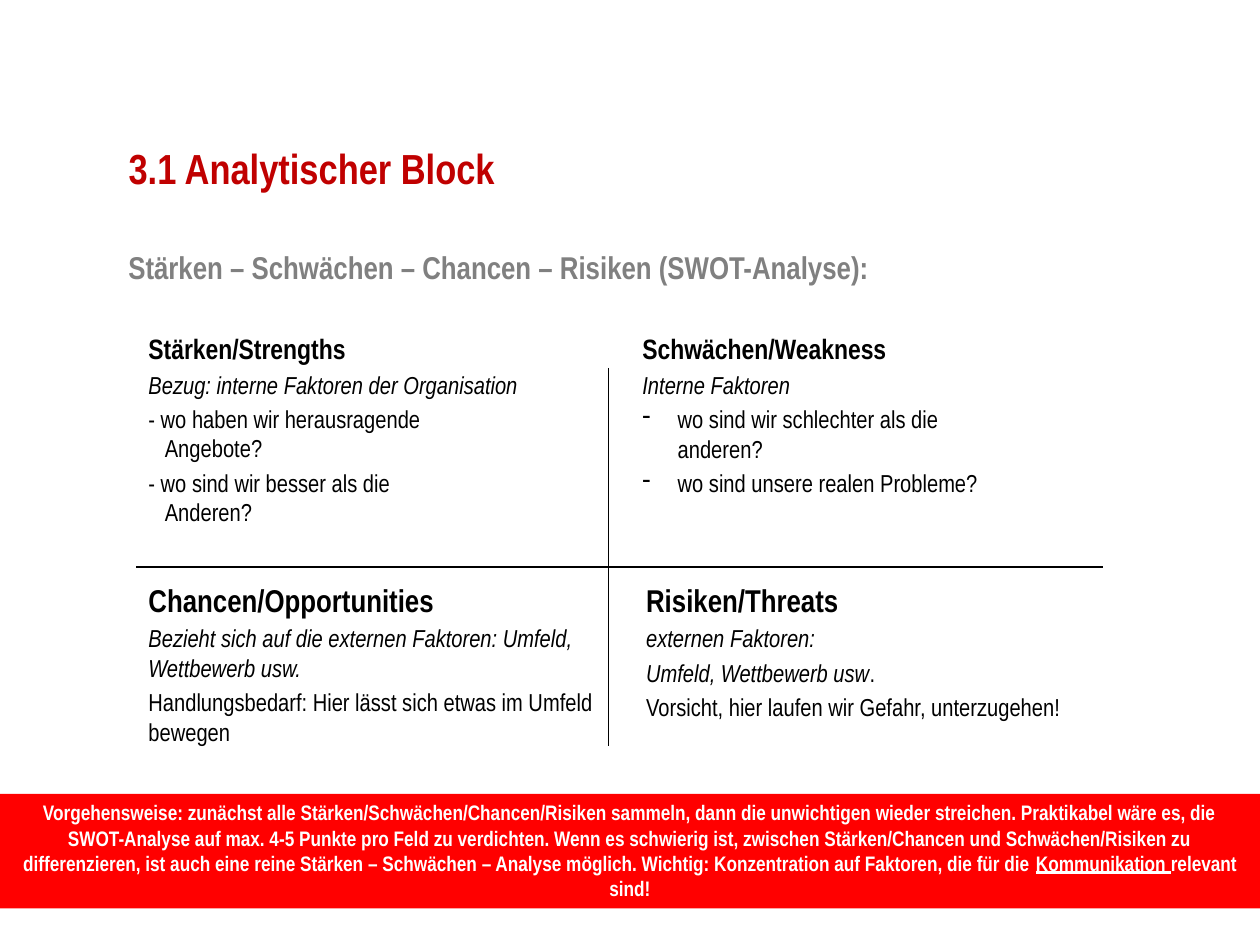
from lxml import etree
from pptx import Presentation
from pptx.dml.color import RGBColor
from pptx.enum.shapes import MSO_CONNECTOR, MSO_SHAPE
from pptx.enum.text import MSO_ANCHOR, MSO_AUTO_SIZE, PP_ALIGN
from pptx.oxml.ns import qn
from pptx.util import Inches, Pt

LEFT, CENTER = PP_ALIGN.LEFT, PP_ALIGN.CENTER
TOP = MSO_ANCHOR.TOP
FIT_SHAPE = MSO_AUTO_SIZE.SHAPE_TO_FIT_TEXT
RECTANGLE = MSO_SHAPE.RECTANGLE
STRAIGHT = MSO_CONNECTOR.STRAIGHT

DARK_RED = RGBColor(0xC0, 0x00, 0x00)
RED = RGBColor(0xFF, 0x00, 0x00)
GRAY = RGBColor(0x80, 0x80, 0x80)
BLACK = RGBColor(0x00, 0x00, 0x00)
WHITE = RGBColor(0xFF, 0xFF, 0xFF)

FONT = "Arial Narrow"
TITLE = {"size": Pt(24), "bold": True}
SUBTITLE = {"size": Pt(18), "bold": True}
INTERNAL_HEADING = {"size": Pt(16), "bold": True}
EXTERNAL_HEADING = {"size": Pt(18), "bold": True}
BODY = {"size": Pt(14), "bold": False}
ITALIC = {**BODY, "italic": True}
BANNER = {"size": Pt(12), "bold": True}
UNDERLINED = {**BANNER, "underline": True}

DASH_HANG = 0.13
BULLET_HANG = 0.28

# Each quadrant: left, top, width, height, paragraphs (runs, hanging indent, bullet)
QUADRANTS = [
    (1.08, 2.58, 3.75, 1.93, [
        ([("Stärken/Strengths", INTERNAL_HEADING)], 0, None),
        ([("Bezug: interne Faktoren der Organisation", ITALIC)], 0, None),
        ([("- wo haben wir herausragende \nAngebote?", BODY)], DASH_HANG, None),
        ([("- wo sind wir besser als die \nAnderen?", BODY)], DASH_HANG, None),
    ]),
    (5, 2.58, 3.75, 1.45, [
        ([("Schwächen/Weakness", INTERNAL_HEADING)], 0, None),
        ([("Interne Faktoren", ITALIC)], 0, None),
        ([("wo sind wir schlechter als die \nanderen?", BODY)], BULLET_HANG, "-"),
        ([("wo sind unsere realen Probleme?", BODY)], BULLET_HANG, "-"),
    ]),
    (1.08, 4.56, 3.83, 1.47, [
        ([("Chancen/Opportunities", EXTERNAL_HEADING)], 0, None),
        ([("Bezieht sich auf die externen Faktoren: Umfeld, Wettbewerb usw.", ITALIC)],
         0, None),
        ([("Handlungsbedarf: Hier lässt sich etwas im Umfeld bewegen", BODY)], 0, None),
    ]),
    (5.03, 4.56, 3.83, 1.47, [
        ([("Risiken/Threats", EXTERNAL_HEADING)], 0, None),
        ([("externen Faktoren:", ITALIC)], 0, None),
        ([("Umfeld, Wettbewerb usw", ITALIC), (".", BODY)], 0, None),
        ([("Vorsicht, hier laufen wir Gefahr, unterzugehen!", BODY)], 0, None),
    ]),
]

AXES = [(1.08, 4.5, 8.75, 4.5), (4.83, 2.92, 4.83, 5.92)]

PROCEDURE = [
    ("Vorgehensweise: zunächst alle Stärken/Schwächen/Chancen/Risiken sammeln, dann die "
     "unwichtigen wieder streichen. Praktikabel wäre es, die SWOT-Analyse auf max. 4-5 "
     "Punkte pro Feld zu verdichten. Wenn es schwierig ist, zwischen Stärken/Chancen und "
     "Schwächen/Risiken zu differenzieren, ist auch eine reine Stärken – Schwächen – "
     "Analyse möglich. Wichtig: Konzentration auf Faktoren, die für die ", BANNER),
    ("Kommunikation ", UNDERLINED),
    ("relevant sind!", BANNER),
]


def set_hanging(paragraph, hang, bullet):
    """Give a paragraph a hanging indent and an optional bullet character."""
    properties = paragraph._p.get_or_add_pPr()
    properties.set("marL", str(Inches(hang)))
    properties.set("indent", str(-Inches(hang)))
    if bullet:
        etree.SubElement(properties, qn("a:buChar")).set("char", bullet)


def write_runs(paragraph, runs, color):
    """Write formatted runs, turning newlines into line breaks."""
    for text, style in runs:
        for index, line in enumerate(text.split("\n")):
            if index:
                paragraph.add_line_break()
            run = paragraph.add_run()
            run.text = line
            run.font.color.rgb = color
            for name, value in {"name": FONT, **style}.items():
                setattr(run.font, name, value)


def fill_text(shape, paragraphs, color, alignment=LEFT):
    """Fill a shape with top-anchored, wrapped paragraphs."""
    frame = shape.text_frame
    settings = {"word_wrap": True, "auto_size": FIT_SHAPE, "vertical_anchor": TOP}
    for name, value in settings.items():
        setattr(frame, name, value)
    for index, (runs, hang, bullet) in enumerate(paragraphs):
        paragraph = frame.add_paragraph() if index else frame.paragraphs[0]
        paragraph.alignment = alignment
        if index:
            paragraph.space_before = Pt(2.8)
        if hang:
            set_hanging(paragraph, hang, bullet)
        write_runs(paragraph, runs, color)


def place_title(slide):
    """Move and format the title placeholder."""
    title = slide.shapes.title
    box = {"left": 0.92, "top": 1.08, "width": 6.5, "height": 0.5}
    for name, value in box.items():
        setattr(title, name, Inches(value))
    fill_text(title, [([("3.1 Analytischer Block", TITLE)], 0, None)], DARK_RED)


def add_text(slide, left, top, width, height, paragraphs, color=BLACK):
    """Add a text box."""
    box = slide.shapes.add_textbox(*map(Inches, (left, top, width, height)))
    fill_text(box, paragraphs, color)


def add_axis(slide, ends):
    """Add a thin black line of the cross."""
    axis = slide.shapes.add_connector(STRAIGHT, *map(Inches, ends))
    axis.line.color.rgb = BLACK
    axis.line.width = Pt(0.75)
    etree.SubElement(axis._element.spPr, qn("a:effectLst"))


def add_banner(slide):
    """Add the red banner with the procedure."""
    banner = slide.shapes.add_shape(RECTANGLE, *map(Inches, (0, 6.3, 10, 0.91)))
    banner.shadow.inherit = False
    banner.fill.solid()
    banner.fill.fore_color.rgb = RED
    banner.line.fill.background()
    fill_text(banner, [(PROCEDURE, 0, None)], WHITE, CENTER)


def main():
    """Build the SWOT slide and save it."""
    presentation = Presentation()
    presentation.slide_width = Inches(10)
    presentation.slide_height = Inches(7.5)
    slide = presentation.slides.add_slide(presentation.slide_layouts[5])
    place_title(slide)
    subtitle = "Stärken – Schwächen – Chancen – Risiken (SWOT-Analyse):"
    add_text(slide, 0.92, 1.92, 8.58, 0.4, [([(subtitle, SUBTITLE)], 0, None)], GRAY)
    for quadrant in QUADRANTS:
        add_text(slide, *quadrant)
    for ends in AXES:
        add_axis(slide, ends)
    add_banner(slide)
    presentation.save("out.pptx")


if __name__ == "__main__":
    main()
